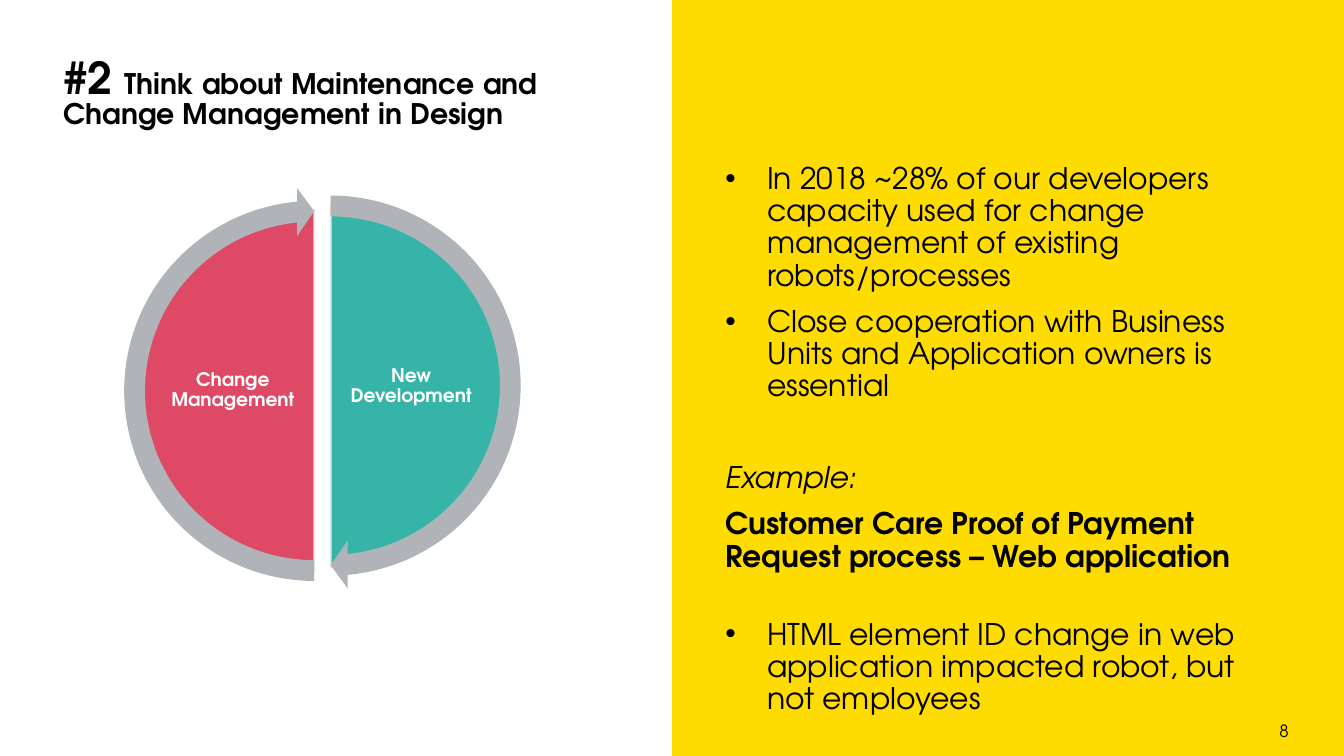
from lxml import etree
from pptx import Presentation
from pptx.dml.color import RGBColor
from pptx.enum.shapes import MSO_SHAPE
from pptx.enum.text import MSO_ANCHOR, MSO_AUTO_SIZE, PP_ALIGN
from pptx.oxml.ns import qn
from pptx.util import Cm, Pt

RECTANGLE = MSO_SHAPE.RECTANGLE
PIE = MSO_SHAPE.PIE
CIRCULAR_ARROW = MSO_SHAPE.CIRCULAR_ARROW
TOP, MIDDLE = MSO_ANCHOR.TOP, MSO_ANCHOR.MIDDLE
LEFT, CENTER = PP_ALIGN.LEFT, PP_ALIGN.CENTER
NO_AUTOFIT = MSO_AUTO_SIZE.NONE

FONT = "TeX Gyre Adventor"
BLACK = RGBColor(0x00, 0x00, 0x00)
WHITE = RGBColor(0xFF, 0xFF, 0xFF)
YELLOW = RGBColor(0xFF, 0xDC, 0x00)
TEAL = RGBColor(0x36, 0xB4, 0xA7)
RED = RGBColor(0xDE, 0x4A, 0x66)
GREY = RGBColor(0xB0, 0xB4, 0xB9)
PALE_GREY = RGBColor(0xE7, 0xE6, 0xE6)

PIE_SIZE = 6.86
ARROW_MARGIN = 0.42
UP, DOWN = 162, 54

HALVES = [
    ("New Development", TEAL, 2.82, 3.86, UP, DOWN, 50.725, 6.55, 5.66),
    ("Change Management", RED, 2.51, 3.96, DOWN, UP, 158.725, 3.18, 5.74),
]

POINTS = [
    ("In 2018 ~28% of our developers capacity used for change management "
     "of existing robots/processes", 0, True, False, False),
    ("Close cooperation with Business Units and Application owners is essential",
     7.5, True, False, False),
    ("Example:", 32, False, False, True),
    ("Customer Care Proof of Payment Request process – Web application",
     7.5, False, True, False),
    ("HTML element ID change in web application impacted robot, but not employees",
     24.5, True, False, False),
]


def set_font(paragraph, size, color=BLACK, bold=False, italic=False):
    font = paragraph.font
    font.name = FONT
    font.size = Pt(size)
    font.bold = bold
    font.italic = italic
    font.color.rgb = color


def add_bullet(paragraph):
    properties = paragraph._p.get_or_add_pPr()
    properties.set("marL", str(Cm(0.79)))
    properties.set("indent", str(-Cm(0.79)))
    etree.SubElement(properties, qn("a:buFont")).set("typeface", "Arial")
    etree.SubElement(properties, qn("a:buChar")).set("char", "•")


def add_text_frame(slide, left, top, width, height, anchor=TOP):
    box = slide.shapes.add_textbox(Cm(left), Cm(top), Cm(width), Cm(height))
    frame = box.text_frame
    frame.word_wrap = True
    frame.vertical_anchor = anchor
    return frame


def add_filled_shape(slide, kind, left, top, width, height, color, adjustments=()):
    shape = slide.shapes.add_shape(kind, Cm(left), Cm(top), Cm(width), Cm(height))
    shape.shadow.inherit = False
    shape.fill.solid()
    shape.fill.fore_color.rgb = color
    shape.line.fill.background()
    for index, value in enumerate(adjustments):
        shape.adjustments[index] = value
    return shape


def add_title(slide):
    title = slide.shapes.title
    title.left, title.top, title.width, title.height = Cm(0.94), Cm(1.02), Cm(11.15), Cm(1.73)
    frame = title.text_frame
    frame.word_wrap = True
    frame.auto_size = NO_AUTOFIT
    frame.vertical_anchor = TOP
    heading = frame.paragraphs[0]
    heading.alignment = LEFT
    heading.line_spacing = 0.8
    set_font(heading, 15.2, bold=True)
    number = heading.add_run()
    number.text = "#2 "
    number.font.size = Pt(23.6)
    heading.add_run().text = "Think about Maintenance and Change Management in Design"


def add_half(slide, color, left, top, start, end):
    half = add_filled_shape(slide, PIE, left, top, PIE_SIZE, PIE_SIZE, color, (start, end))
    half.line.color.rgb = PALE_GREY
    half.line.width = Pt(1)


def add_half_label(slide, text, left, top):
    frame = add_text_frame(slide, left, top, 2.44, 3.28, MIDDLE)
    frame.margin_left = frame.margin_right = Cm(0.03)
    frame.margin_top = frame.margin_bottom = Cm(0.03)
    label = frame.paragraphs[0]
    label.text = text
    label.alignment = CENTER
    label.line_spacing = 0.9
    set_font(label, 10, WHITE, bold=True)


def add_cycle_arrow(slide, left, top, start, tip):
    size = PIE_SIZE + 2 * ARROW_MARGIN
    add_filled_shape(slide, CIRCULAR_ARROW, left - ARROW_MARGIN, top - ARROW_MARGIN,
                     size, size, GREY, (0.051, 3.275, tip, start, 0.059))


def add_cycle(slide):
    for text, color, left, top, start, end, tip, label_left, label_top in HALVES:
        add_half(slide, color, left, top, start, end)
        add_half_label(slide, text, label_left, label_top)
    for text, color, left, top, start, end, tip, label_left, label_top in HALVES:
        add_cycle_arrow(slide, left, top, start, tip)


def add_points(slide):
    frame = add_text_frame(slide, 13.46, 2.97, 10.74, 10.7)
    for index, (text, space_before, bulleted, bold, italic) in enumerate(POINTS):
        point = frame.add_paragraph() if index else frame.paragraphs[0]
        point.text = text
        point.line_spacing = 0.9
        if space_before:
            point.space_before = Pt(space_before)
        if bulleted:
            add_bullet(point)
        set_font(point, 16, bold=bold, italic=italic)


def add_page_number(slide):
    number = add_text_frame(slide, 23.93, 13.49, 1.14, 0.56).paragraphs[0]
    number.text = "8"
    set_font(number, 9)


def main():
    presentation = Presentation()
    presentation.slide_width = Cm(25.4)
    presentation.slide_height = Cm(14.29)
    slide = presentation.slides.add_slide(presentation.slide_layouts[5])
    add_filled_shape(slide, RECTANGLE, 12.7, 0, 12.7, 14.29, YELLOW)
    add_title(slide)
    add_page_number(slide)
    add_points(slide)
    add_cycle(slide)
    presentation.save("out.pptx")


if __name__ == "__main__":
    main()
